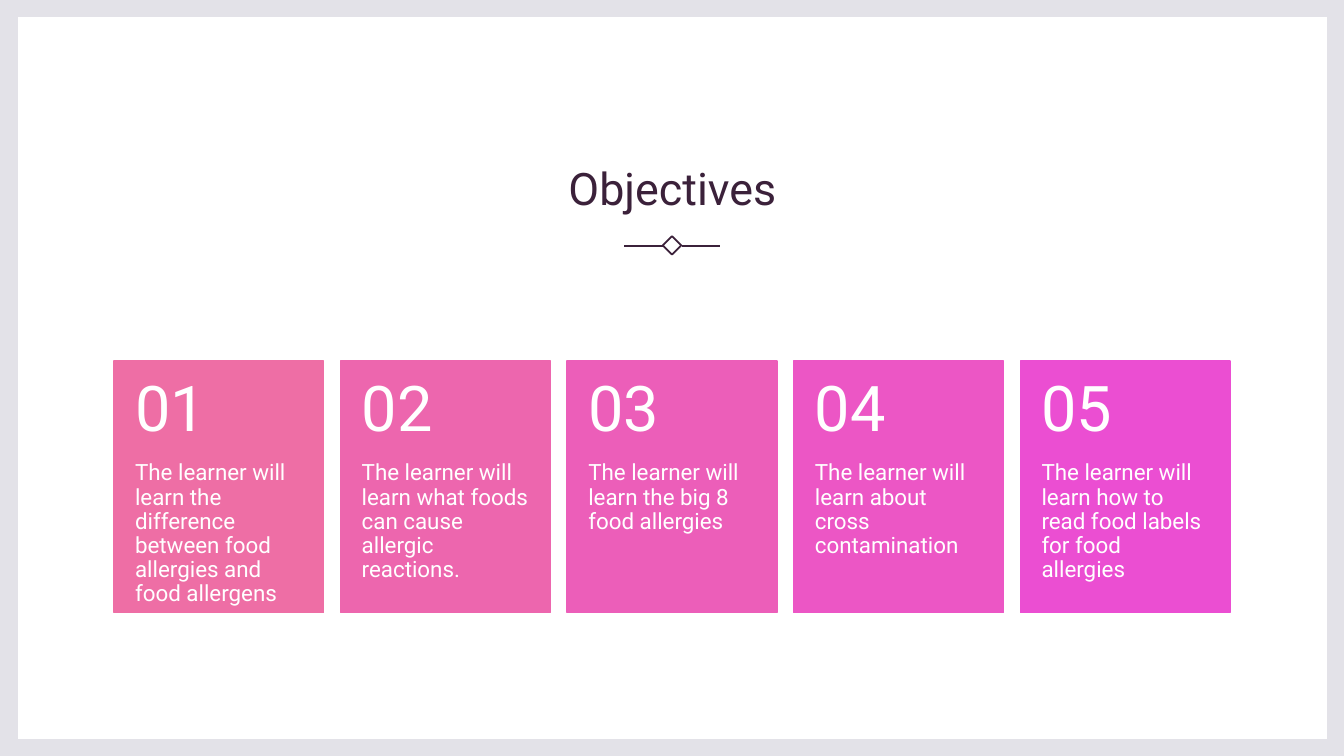
from dataclasses import dataclass
from lxml.etree import SubElement
from pptx import Presentation
from pptx.dml.color import RGBColor
from pptx.enum.shapes import MSO_CONNECTOR, MSO_SHAPE
from pptx.enum.text import MSO_ANCHOR, PP_ALIGN
from pptx.oxml.ns import qn
from pptx.shapes.autoshape import Shape
from pptx.slide import Slide
from pptx.util import Inches, Pt


@dataclass(frozen=True)
class Theme:
    """Colours, font and type sizes of the slide."""
    frame: str = "E3E2E8"
    paper: str = "FFFFFF"
    ink: str = "3B213A"
    font: str = "Roboto"
    title: float = 32
    number: float = 45
    body: float = 16
    line: float = 1.25
    edge: float = 1


@dataclass(frozen=True)
class Box:
    """A place on the slide in inches."""
    left: float
    top: float
    width: float
    height: float


@dataclass(frozen=True)
class Style:
    """The look and layout of one text."""
    size: float
    color: str
    space: float
    anchor: MSO_ANCHOR
    align: PP_ALIGN
    inset: tuple[float, float, float, float]


@dataclass(frozen=True)
class Card:
    """One objective and the colour of its card."""
    color: str
    text: str


THEME = Theme()
TITLE = Style(THEME.title, THEME.ink, 1.1, MSO_ANCHOR.BOTTOM, PP_ALIGN.CENTER, (0.1, 0.05, 0.1, 0.05))
NUMBER = Style(THEME.number, THEME.paper, 0.9, MSO_ANCHOR.MIDDLE, PP_ALIGN.LEFT, (0.21, 0.18, 0.21, 0.18))
BODY = Style(THEME.body, THEME.paper, 0.9, MSO_ANCHOR.TOP, PP_ALIGN.LEFT, (0.21, 0, 0.21, 0.36))
CARDS = [
    Card("EE6EA5", "The learner will learn the difference between food allergies and food allergens"),
    Card("ED66AE", "The learner will learn what foods can cause allergic reactions."),
    Card("EC5EB9", "The learner will learn the big 8 food allergies"),
    Card("EC56C5", "The learner will learn about cross contamination"),
    Card("EB4ED2", "The learner will learn how to read food labels for food allergies"),
]
ROW = Box(1.13, 3.58, 11.07, 2.5)
WIDTH, HEAD = 2.08, 1.0


def add_rect(slide: Slide, box: Box, fill: str | None, line: str | None = None, weight: float = 1) -> Shape:
    """Draw a flat rectangle."""
    rect = slide.shapes.add_shape(
        MSO_SHAPE.RECTANGLE, Inches(box.left), Inches(box.top), Inches(box.width), Inches(box.height))
    rect.shadow.inherit = False
    if fill:
        rect.fill.solid()
        rect.fill.fore_color.rgb = RGBColor.from_string(fill)
    else:
        rect.fill.background()
    if line:
        rect.line.color.rgb = RGBColor.from_string(line)
        rect.line.width = Pt(weight)
    else:
        rect.line.fill.background()
    return rect


def add_text(slide: Slide, box: Box, text: str, style: Style) -> None:
    """Write one paragraph in a wrapping text box."""
    area = slide.shapes.add_textbox(
        Inches(box.left), Inches(box.top), Inches(box.width), Inches(box.height))
    frame = area.text_frame
    frame.word_wrap = True
    frame.vertical_anchor = style.anchor
    left, top, right, bottom = style.inset
    frame.margin_left, frame.margin_top = Inches(left), Inches(top)
    frame.margin_right, frame.margin_bottom = Inches(right), Inches(bottom)
    para = frame.paragraphs[0]
    para.alignment = style.align
    para.line_spacing = style.space
    run = para.add_run()
    run.text = text
    run.font.name = THEME.font
    run.font.size = Pt(style.size)
    run.font.color.rgb = RGBColor.from_string(style.color)


def add_line(slide: Slide, start: float, end: float, top: float) -> None:
    """Draw a level line without a shadow."""
    line = slide.shapes.add_connector(
        MSO_CONNECTOR.STRAIGHT, Inches(start), Inches(top), Inches(end), Inches(top))
    line.line.color.rgb = RGBColor.from_string(THEME.ink)
    line.line.width = Pt(THEME.line)
    SubElement(line._element.spPr, qn("a:effectLst"))


def add_card(slide: Slide, index: int, card: Card) -> None:
    """Draw a numbered card in its place in the row."""
    step = (ROW.width - WIDTH) / (len(CARDS) - 1)
    left = ROW.left + index * step
    add_rect(slide, Box(left, ROW.top, WIDTH, ROW.height), card.color, card.color, THEME.edge)
    add_text(slide, Box(left, ROW.top + HEAD, WIDTH, ROW.height - HEAD), card.text, BODY)
    add_text(slide, Box(left, ROW.top, WIDTH, HEAD), f"{index + 1:02}", NUMBER)


def main() -> None:
    """Build the slide and save it."""
    deck = Presentation()
    deck.slide_width, deck.slide_height = Inches(13.33), Inches(7.5)
    slide = deck.slides.add_slide(deck.slide_layouts[6])
    add_rect(slide, Box(0, 0, 13.33, 7.5), THEME.frame)
    add_rect(slide, Box(0.18, 0.17, 12.98, 7.16), THEME.paper)
    add_text(slide, Box(1.13, 1.05, 11.08, 1.13), "Objectives", TITLE)
    gem = add_rect(slide, Box(6.6, 2.37, 0.13, 0.13), None, THEME.ink, THEME.line)
    gem.rotation = 45
    for start, end in ((6.76, 7.14), (6.19, 6.58)):
        add_line(slide, start, end, 2.44)
    for index, card in enumerate(CARDS):
        add_card(slide, index, card)
    deck.save("out.pptx")


if __name__ == "__main__":
    main()
